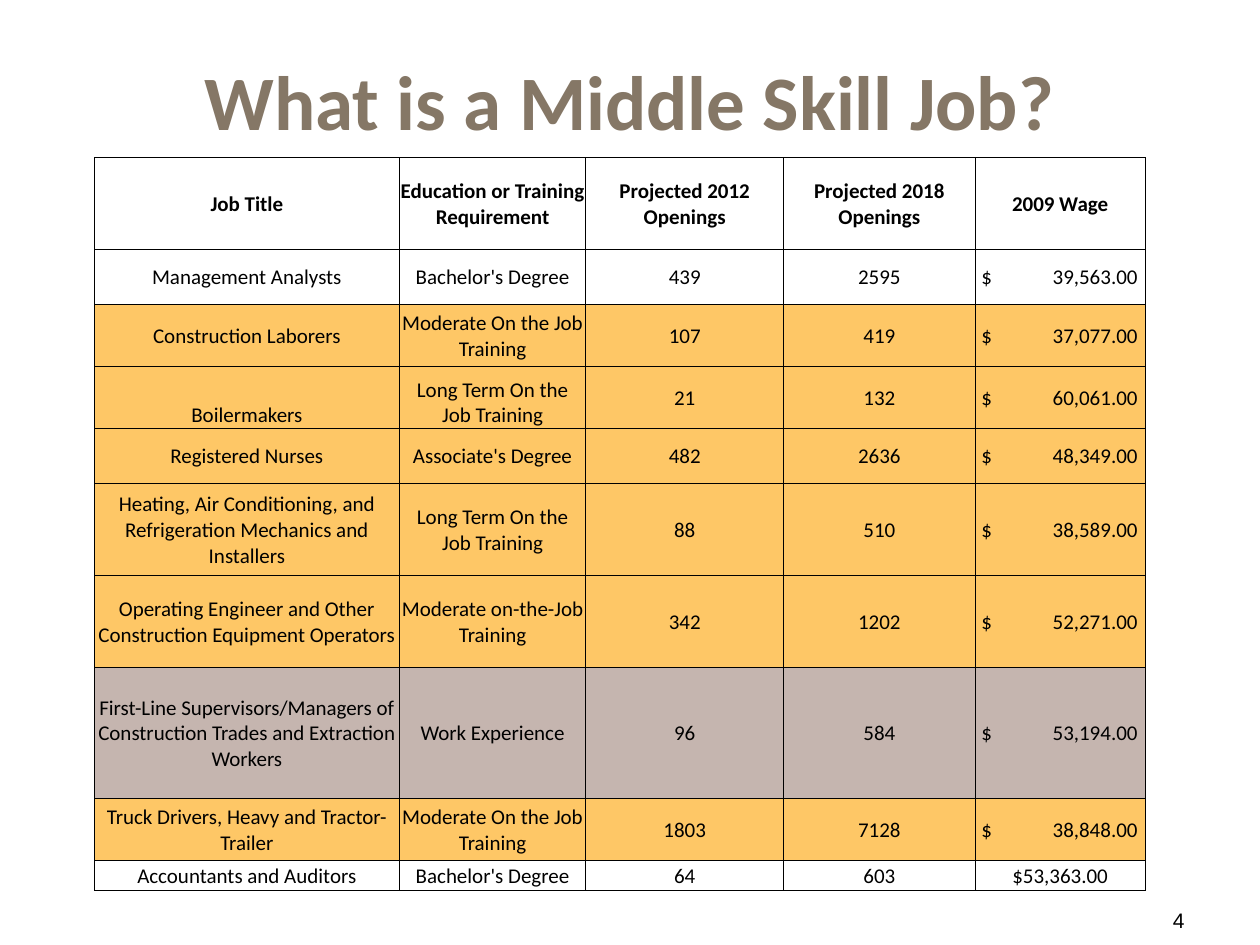
from lxml import etree
from pptx import Presentation
from pptx.dml.color import RGBColor
from pptx.enum.text import MSO_ANCHOR, PP_ALIGN
from pptx.oxml.ns import qn
from pptx.util import Inches, Pt

MIDDLE, BOTTOM = MSO_ANCHOR.MIDDLE, MSO_ANCHOR.BOTTOM
LEFT, CENTER, RIGHT = PP_ALIGN.LEFT, PP_ALIGN.CENTER, PP_ALIGN.RIGHT

COLORS = {"title": "857766", "text": "000000", "middle": "FEC766", "super": "C5B5AF"}

TITLE = "What is a Middle Skill Job?"
NUMBER = "4"
HEADS = ["Job Title", "Education or Training Requirement", "Projected 2012 Openings",
         "Projected 2018 Openings", "2009 Wage"]
# Fill, height, then the five cells; a tab sets the wage apart from its sign.
ROWS = [
    (None, 0.73, HEADS),
    (None, 0.44, ["Management Analysts", "Bachelor's Degree", "439", "2595", "$\t39,563.00"]),
    ("middle", 0.49, ["Construction Laborers", "Moderate On the Job Training",
                      "107", "419", "$\t37,077.00"]),
    ("middle", 0.49, ["Boilermakers", "Long Term On the Job Training",
                      "21", "132", "$\t60,061.00"]),
    ("middle", 0.44, ["Registered Nurses", "Associate's Degree",
                      "482", "2636", "$\t48,349.00"]),
    ("middle", 0.73, ["Heating, Air Conditioning, and Refrigeration Mechanics and Installers",
                      "Long Term On the Job Training", "88", "510", "$\t38,589.00"]),
    ("middle", 0.73, ["Operating Engineer and Other Construction Equipment Operators",
                      "Moderate on-the-Job Training", "342", "1202", "$\t52,271.00"]),
    ("super", 1.04, ["First-Line Supervisors/Managers of Construction Trades and "
                     "Extraction Workers", "Work Experience", "96", "584", "$\t53,194.00"]),
    ("middle", 0.49, ["Truck Drivers, Heavy and Tractor-Trailer",
                      "Moderate On the Job Training", "1803", "7128", "$\t38,848.00"]),
    (None, 0.24, ["Accountants and Auditors", "Bachelor's Degree", "64", "603", "$53,363.00"]),
]
WIDTHS = [2.42, 1.48, 1.57, 1.52, 1.35]
LOW = {(3, 0), (3, 1)}  # cells with text at the bottom


def write(frame, text, size, font="Calibri", color="text", bold=False, align=CENTER):
    para = frame.paragraphs[0]
    para.alignment = align
    run = para.add_run()
    run.text = text
    run.font.size, run.font.name, run.font.bold = Pt(size), font, bold
    run.font.color.rgb = RGBColor.from_string(COLORS[color])
    return para


def place(shape, left, top, width, height):
    shape.left, shape.top = Inches(left), Inches(top)
    shape.width, shape.height = Inches(width), Inches(height)


def add_tab(para, pos):
    """Add a right-aligned tab stop, pos inches from the text edge."""
    tabs = etree.SubElement(para._p.get_or_add_pPr(), qn("a:tabLst"))
    etree.SubElement(tabs, qn("a:tab"), pos=str(Inches(pos)), algn="r")


def add_edges(cell):
    """Draw thin lines on all four sides; they must come before the fill."""
    props = cell._tc.get_or_add_tcPr()
    for spot, side in enumerate(("lnL", "lnR", "lnT", "lnB")):
        line = etree.Element(qn("a:" + side), w=str(Pt(0.5)))
        fill = etree.SubElement(line, qn("a:solidFill"))
        etree.SubElement(fill, qn("a:srgbClr"), val=COLORS["text"])
        props.insert(spot, line)


def fill_cell(cell, text, fill, bold, anchor):
    cell.vertical_anchor = anchor
    cell.margin_left = cell.margin_right = cell.margin_top = Inches(0.01)
    cell.margin_bottom = 0
    if fill:
        cell.fill.solid()
        cell.fill.fore_color.rgb = RGBColor.from_string(COLORS[fill])
    else:
        cell.fill.background()
    split = "\t" in text
    para = write(cell.text_frame, text, 12, bold=bold, align=LEFT if split else CENTER)
    if split:
        cell.margin_left = Inches(0.05)
        add_tab(para, 1.24)
    add_edges(cell)


def add_jobs(slide):
    heights = [row[1] for row in ROWS]
    frame = slide.shapes.add_table(
        len(ROWS), len(WIDTHS), Inches(0.75), Inches(1.25),
        Inches(sum(WIDTHS)), Inches(sum(heights)))
    table = frame.table
    table.first_row = table.horz_banding = False
    for col, width in zip(table.columns, WIDTHS):
        col.width = Inches(width)
    for r, (fill, height, texts) in enumerate(ROWS):
        table.rows[r].height = Inches(height)
        for c, text in enumerate(texts):
            anchor = BOTTOM if (r, c) in LOW else MIDDLE
            fill_cell(table.cell(r, c), text, fill, r == 0, anchor)


def main():
    deck = Presentation()
    deck.slide_width, deck.slide_height = Inches(10), Inches(7.5)
    slide = deck.slides.add_slide(deck.slide_layouts[5])

    title = slide.shapes.title
    place(title, 0.5, 0.17, 9, 1.25)
    title.text_frame.vertical_anchor = MIDDLE
    write(title.text_frame, TITLE, 44, color="title", bold=True)

    box = slide.shapes.add_textbox(Inches(7.17), Inches(7.1), Inches(2.33), Inches(0.4))
    box.text_frame.word_wrap = True
    box.text_frame.vertical_anchor = MIDDLE
    write(box.text_frame, NUMBER, 12, font="Arial", align=RIGHT)

    add_jobs(slide)
    deck.save("out.pptx")


if __name__ == "__main__":
    main()
